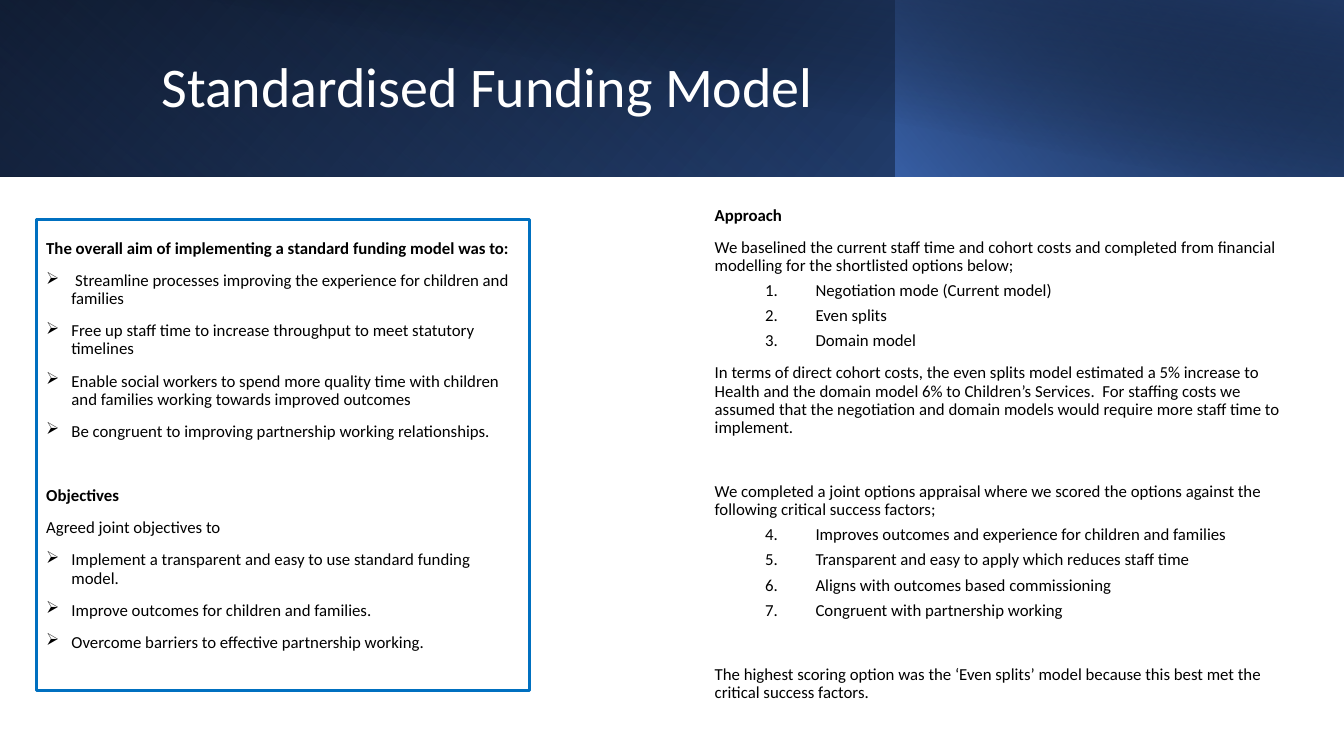
from lxml.etree import SubElement
from pptx import Presentation
from pptx.dml.color import RGBColor
from pptx.enum.shapes import MSO_SHAPE
from pptx.enum.text import MSO_ANCHOR, PP_ALIGN
from pptx.oxml.ns import qn
from pptx.util import Inches, Pt

COLOURS = {
    "black": "000000",
    "white": "FFFFFF",
    "blue": "2F5597",
    "bright": "4472C4",
    "navy": "203864",
    "border": "0070C0",
}
FONT = "Calibri"
SECTION_GAP = 33

AIMS = [
    ("heading", "The overall aim of implementing a standard funding model was to:", 0),
    ("arrow", " Streamline processes improving the experience for children and families", 10),
    ("arrow", "Free up staff time to increase throughput to meet statutory timelines", 10),
    ("arrow", "Enable social workers to spend more quality time with children and families "
              "working towards improved outcomes", 10),
    ("arrow", "Be congruent to improving partnership working relationships.", 10),
    ("heading", "Objectives", SECTION_GAP),
    ("body", "Agreed joint objectives to", 10),
    ("arrow", "Implement a transparent and easy to use standard funding model.", 10),
    ("arrow", "Improve outcomes for children and families.", 10),
    ("arrow", "Overcome barriers to effective partnership working.", 10),
]
APPROACH = [
    ("heading", "Approach", 0),
    ("body", "We baselined the current staff time and cohort costs and completed from "
             "financial modelling for the shortlisted options below;", 10),
    (1, "Negotiation mode (Current model)", 5),
    (1, "Even splits", 5),
    (1, "Domain model", 5),
    ("body", "In terms of direct cohort costs, the even splits model estimated a 5% increase "
             "to Health and the domain model 6% to Children’s Services.  For staffing costs "
             "we assumed that the negotiation and domain models would require more staff "
             "time to implement.", 10),
    ("body", "We completed a joint options appraisal where we scored the options against "
             "the following critical success factors;", SECTION_GAP),
    (4, "Improves outcomes and experience for children and families", 5),
    (4, "Transparent and easy to apply which reduces staff time", 5),
    (4, "Aligns with outcomes based commissioning", 5),
    (4, "Congruent with partnership working", 5),
    ("body", "The highest scoring option was the ‘Even splits’ model because this best met "
             "the critical success factors.", SECTION_GAP),
]


def colour(name):
    return RGBColor.from_string(COLOURS[name])


def format_runs(para, size, colour_name, bold=False):
    for span in para.runs:
        span.font.name = FONT
        span.font.size = Pt(size)
        span.font.bold = bold
        span.font.color.rgb = colour(colour_name)


def add_gradient(slide, box, stops, angle, flip=True, rotation=0):
    panel = slide.shapes.add_shape(MSO_SHAPE.RECTANGLE, *map(Inches, box))
    panel.shadow.inherit = False
    panel.rotation = rotation
    panel.line.fill.background()
    panel.fill.gradient()
    properties = panel._element.spPr
    if flip:
        properties.find(qn("a:xfrm")).set("flipH", "1")
    gradient = properties.find(qn("a:gradFill"))
    for child in list(gradient):
        gradient.remove(child)
    stop_list = SubElement(gradient, qn("a:gsLst"))
    for position, name, opacity in stops:
        stop = SubElement(stop_list, qn("a:gs"), pos=str(position * 1000))
        shade = SubElement(stop, qn("a:srgbClr"), val=COLOURS[name])
        if opacity < 100:
            SubElement(shade, qn("a:alpha"), val=str(opacity * 1000))
    SubElement(gradient, qn("a:lin"), ang=str(angle * 60000), scaled="0")


def add_banner(slide, left, top, width, height):
    split = left + width * 2 / 3
    add_gradient(slide, (left, top, width, height),
                 [(0, "black", 100), (100, "blue", 100)], 140)
    add_gradient(slide, (left, top, split - left, height),
                 [(20, "bright", 0), (100, "navy", 55)], 230, rotation=180)
    add_gradient(slide, (split, top, left + width - split, height),
                 [(0, "bright", 66), (100, "black", 30)], 220)
    add_gradient(slide, (left + 0.5, top, width - 0.5, height),
                 [(50, "black", 0), (99, "navy", 52)], 280, flip=False)


def add_title(slide, left, top, width, height):
    title = slide.shapes.title
    title.left, title.top = Inches(left), Inches(top)
    title.width, title.height = Inches(width), Inches(height)
    title.text_frame.text = "Standardised Funding Model"
    title.text_frame.vertical_anchor = MSO_ANCHOR.MIDDLE
    para = title.text_frame.paragraphs[0]
    para.alignment = PP_ALIGN.LEFT
    para.line_spacing = 0.9
    format_runs(para, 40, "white")
    tree = slide.shapes._spTree
    tree.remove(title._element)
    tree.append(title._element)


def add_marker(para, kind):
    properties = para._p.get_or_add_pPr()
    margin, hanging = (0.25, 0.25) if kind == "arrow" else (1, 0.5)
    properties.set("marL", str(Inches(margin)))
    properties.set("indent", str(-Inches(hanging)))
    if kind == "arrow":
        SubElement(properties, qn("a:buChar"), char="➢")
    else:
        SubElement(properties, qn("a:buAutoNum"), type="arabicPeriod", startAt=str(kind))


def fill_text(frame, items, top_margin):
    frame.word_wrap = True
    frame.vertical_anchor = MSO_ANCHOR.TOP
    frame.margin_top = Inches(top_margin)
    for index, (kind, text, space_before) in enumerate(items):
        para = frame.add_paragraph() if index else frame.paragraphs[0]
        para.text = text
        para.alignment = PP_ALIGN.LEFT
        para.line_spacing = 0.9
        para.space_before = Pt(space_before)
        format_runs(para, 12, "black", kind == "heading")
        if kind not in ("heading", "body"):
            add_marker(para, kind)


def add_aims(slide, left, top, width, height):
    panel = slide.shapes.add_shape(MSO_SHAPE.RECTANGLE, *map(Inches, (left, top, width, height)))
    panel.shadow.inherit = False
    panel.fill.background()
    panel.line.color.rgb = colour("border")
    panel.line.width = Pt(2.25)
    fill_text(panel.text_frame, AIMS, 0.2)


def add_approach(slide, left, top, width, height):
    box = slide.shapes.add_textbox(*map(Inches, (left, top, width, height)))
    fill_text(box.text_frame, APPROACH, 0.05)


def main():
    deck = Presentation()
    deck.slide_width, deck.slide_height = Inches(13.33), Inches(7.5)
    page = deck.slides.add_slide(deck.slide_layouts[5])
    add_banner(page, 0, 0, 13.33, 1.75)
    add_title(page, 1.5, 0.32, 10.82, 1.13)
    add_aims(page, 0.36, 2.18, 4.89, 4.67)
    add_approach(page, 6.99, 2, 5.98, 5.18)
    deck.save("out.pptx")


if __name__ == "__main__":
    main()
